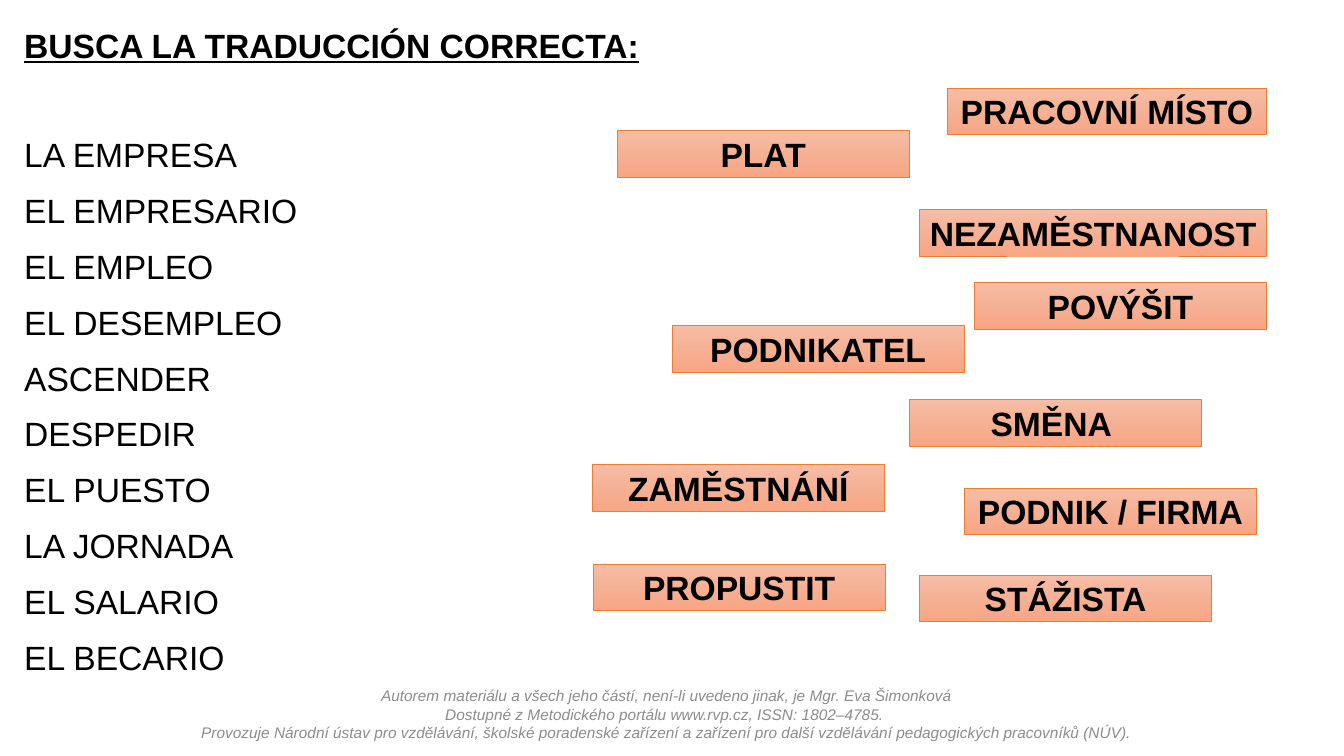
from copy import deepcopy
from dataclasses import dataclass

from pptx import Presentation
from pptx import util as u
from pptx.dml.color import RGBColor as RGB
from pptx.enum import shapes, text
from pptx.oxml import ns, xmlchemy as xml


@dataclass(frozen=True)
class Theme:
    font: str = "Arial"
    ink: str = "000000"
    note: str = "8C8C8C"
    edge: str = "ED7D31"
    fade: tuple = ((0, "F7BDA5"), (0.5, "F5B196"), (1, "F8A582"))
    main: float = 24
    small: float = 11


class Page:
    def __init__(self, deck, theme):
        self.theme = theme
        self.slide = deck.slides.add_slide(deck.slide_layouts[1])

    def place(self, shape, left, top, width, height):
        shape.left, shape.top = u.Pt(left), u.Pt(top)
        shape.width, shape.height = u.Pt(width), u.Pt(height)

    def style(self, para, size, color, **marks):
        font = para.font
        font.name, font.size = self.theme.font, u.Pt(size)
        font.color.rgb = RGB.from_string(color)
        for mark, value in marks.items():
            setattr(font, mark, value)

    def frame(self, shape, anchor):
        frame = shape.text_frame
        frame.word_wrap = True
        frame.auto_size = text.MSO_AUTO_SIZE.NONE
        frame.vertical_anchor = anchor
        return frame

    def title(self, words, *box):
        shape = self.slide.shapes.title
        self.place(shape, *box)
        para = self.frame(shape, text.MSO_ANCHOR.TOP).paragraphs[0]
        para.text = words
        para.alignment = text.PP_ALIGN.LEFT
        para.line_spacing = 0.9
        self.style(para, self.theme.main, self.theme.ink, bold=True, underline=True)

    def list(self, items, *box):
        shape = self.slide.placeholders[1]
        self.place(shape, *box)
        frame = self.frame(shape, text.MSO_ANCHOR.TOP)
        frame.text = "\n".join(items)
        for para in frame.paragraphs:
            para.line_spacing, para.space_before = 1.04, u.Pt(10)
            self.style(para, self.theme.main, self.theme.ink)
            # Plain lines: no bullet, no hanging indent
            props = para._p.get_or_add_pPr()
            props.set("marL", "0")
            props.set("indent", "0")
            props.append(xml.OxmlElement("a:buNone"))

    def card(self, words, left, top, width=208.8, height=33.2):
        shape = self.slide.shapes.add_shape(
            shapes.MSO_SHAPE.RECTANGLE, 0, 0, 0, 0)
        self.place(shape, left, top, width, height)
        shape.shadow.inherit = False
        shape.line.color.rgb = RGB.from_string(self.theme.edge)
        shape.line.width = u.Pt(0.5)
        self.shade(shape)
        frame = self.frame(shape, text.MSO_ANCHOR.MIDDLE)
        para = frame.paragraphs[0]
        para.text = words
        para.alignment = text.PP_ALIGN.CENTER
        self.style(para, self.theme.main, self.theme.ink, bold=True)

    def shade(self, shape):
        fill = shape.fill
        fill.gradient()
        fill.gradient_angle = 270
        # A third stop between the two standard ones
        stops = shape._element.spPr.find(".//" + ns.qn("a:gsLst"))
        stops.insert(1, deepcopy(stops[0]))
        for stop, (spot, color) in zip(fill.gradient_stops, self.theme.fade):
            stop.position = spot
            stop.color.rgb = RGB.from_string(color)

    def note(self, words, *box):
        shape = self.slide.shapes.add_textbox(0, 0, 0, 0)
        self.place(shape, *box)
        para = self.frame(shape, text.MSO_ANCHOR.TOP).paragraphs[0]
        para.text = words
        para.alignment = text.PP_ALIGN.CENTER
        self.style(para, self.theme.small, self.theme.note, italic=True)


WORDS = ["LA EMPRESA", "EL EMPRESARIO", "EL EMPLEO", "EL DESEMPLEO", "ASCENDER",
         "DESPEDIR", "EL PUESTO", "LA JORNADA", "EL SALARIO", "EL BECARIO"]

# Translation, left, top and, for long words, width
CARDS = [
    ("PODNIK / FIRMA", 688.8, 348.5),
    ("PODNIKATEL", 480, 232.5),
    ("ZAMĚSTNÁNÍ", 423, 331.8),
    ("NEZAMĚSTNANOST", 656.8, 149.7, 248),
    ("POVÝŠIT", 696, 201.8),
    ("PROPUSTIT", 423.6, 403),
    ("PRACOVNÍ MÍSTO", 676.6, 62.9, 228.2),
    ("SMĚNA ", 649.4, 285.4),
    ("PLAT", 440.8, 93.2),
    ("STÁŽISTA", 656.8, 410.7),
]

CREDIT = "\v".join([
    "Autorem materiálu a všech jeho částí, není-li uvedeno jinak, je Mgr. Eva Šimonková",
    "Dostupné z Metodického portálu www.rvp.cz, ISSN: 1802–4785. ",
    "Provozuje Národní ústav pro vzdělávání, školské poradenské zařízení a zařízení "
    "pro další vzdělávání pedagogických pracovníků (NÚV).",
])


def main():
    deck = Presentation()
    deck.slide_width, deck.slide_height = u.Pt(960), u.Pt(540)
    page = Page(deck, Theme())

    # Task and Spanish words
    page.title("BUSCA LA TRADUCCIÓN CORRECTA:", 10.1, 17.3, 936, 34)
    page.list(WORDS, 10.1, 90.8, 400, 395.9)

    # Authorship line
    page.note(CREDIT, 31, 486.7, 890.6, 47.5)

    # Scattered Czech translations
    for card in CARDS:
        page.card(*card)

    deck.save("out.pptx")


if __name__ == "__main__":
    main()
